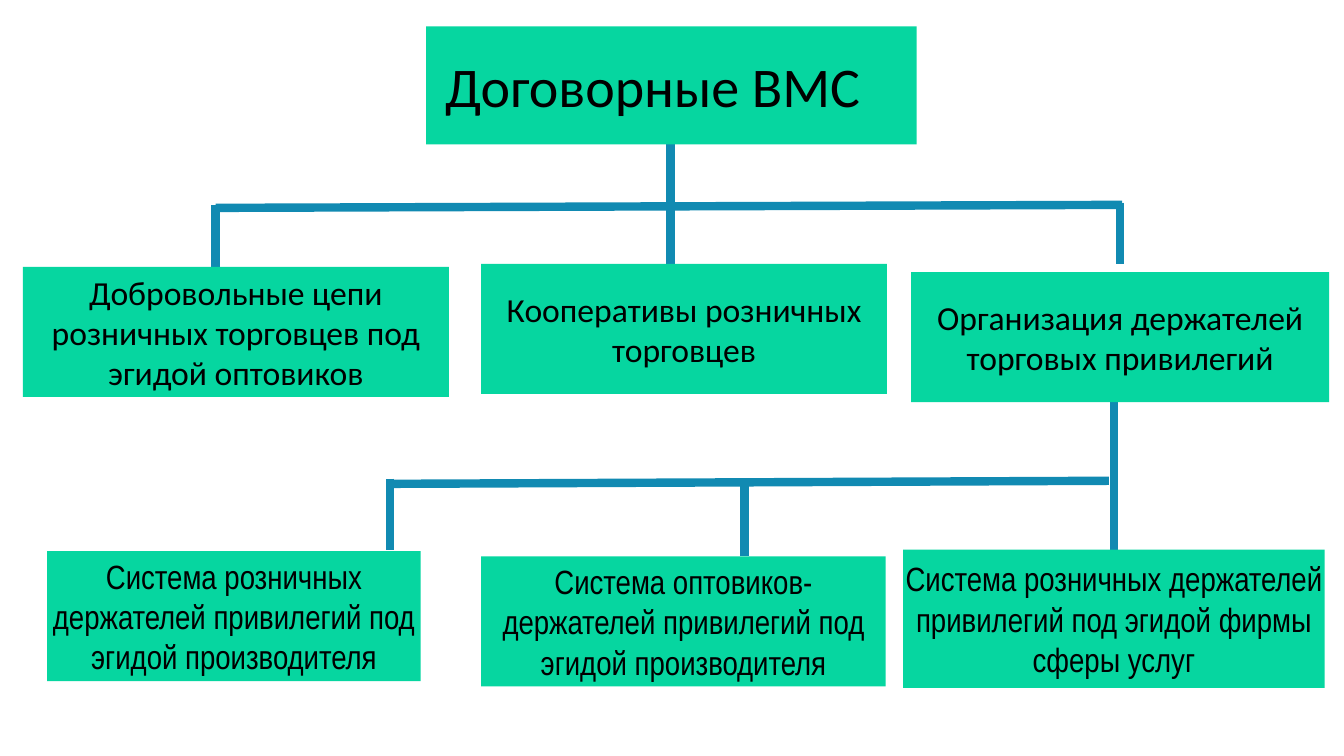
from lxml import etree
from pptx import Presentation
from pptx.dml.color import RGBColor
from pptx.enum.shapes import MSO_CONNECTOR, MSO_SHAPE
from pptx.enum.text import MSO_ANCHOR, PP_ALIGN
from pptx.oxml.ns import qn
from pptx.util import Inches, Pt

RECT, STRAIGHT = MSO_SHAPE.RECTANGLE, MSO_CONNECTOR.STRAIGHT
LEFT, CENTER, MIDDLE = PP_ALIGN.LEFT, PP_ALIGN.CENTER, MSO_ANCHOR.MIDDLE
COLORS = {"box": "06D6A0", "line": "118AB2", "text": "000000"}

prs = Presentation()
prs.slide_width, prs.slide_height = Inches(13.33), Inches(7.5)
s = prs.slides.add_slide(prs.slide_layouts[6])


def place(x, y):
    """Turn percentages of the slide's width and height into lengths."""
    return int(prs.slide_width * x / 100), int(prs.slide_height * y / 100)


def add_box(text, x, y, w, h=17.2, font="Calibri", size=24, align=CENTER, inset=0.1):
    sp = s.shapes.add_shape(RECT, *place(x, y), *place(w, h))
    sp.shadow.inherit = False
    sp.fill.solid()
    sp.fill.fore_color.rgb = RGBColor.from_string(COLORS["box"])
    sp.line.fill.background()
    tf = sp.text_frame
    tf.word_wrap = True
    tf.vertical_anchor = MIDDLE
    tf.margin_left = tf.margin_right = Inches(inset)
    tf.margin_top = tf.margin_bottom = 0
    p = tf.paragraphs[0]
    p.alignment = align
    r = p.add_run()
    r.text = text
    r.font.name, r.font.size = font, Pt(size)
    r.font.color.rgb = RGBColor.from_string(COLORS["text"])


# Connectors as x1, y1, x2, y2 in percent of the slide
title_links = [
    (49.9, 16.3, 49.9, 36),
    (83.5, 27.1, 16.05, 27.5),
    (16.05, 27.1, 16.05, 35.6),
    (83.35, 26.8, 83.35, 34.9),
]
franchise_links = [
    (82.9, 51.5, 82.9, 72.7),
    (82.5, 63.6, 29, 64),
    (29, 63.3, 29, 72.8),
    (55.4, 64, 55.4, 73.5),
]
for x1, y1, x2, y2 in title_links + franchise_links:
    link = s.shapes.add_connector(STRAIGHT, *place(x1, y1), *place(x2, y2))
    link.line.width = Pt(6)
    link.line.color.rgb = RGBColor.from_string(COLORS["line"])
    etree.SubElement(link._element.spPr, qn("a:effectLst"))

# Boxes, level by level
add_box("Договорные ВМС", 31.7, 3.5, 36.5, 15.6, size=40, align=LEFT, inset=0.19)

add_box("Добровольные цепи розничных торговцев под эгидой оптовиков", 1.7, 35.3, 31.7)
add_box("Кооперативы розничных торговцев", 35.8, 34.9, 30.2)
add_box("Организация держателей торговых привилегий", 67.8, 36, 31.1)

narrow = "Arial Narrow"
add_box("Система розничных держателей привилегий под эгидой производителя",
        3.5, 72.9, 27.8, font=narrow, inset=0)
add_box("Система оптовиков-держателей привилегий под эгидой производителя",
        35.8, 73.6, 30.1, font=narrow)
add_box("Система розничных держателей привилегий под эгидой фирмы сферы услуг",
        67.2, 72.7, 31.35, 18.3, font=narrow, inset=0)

prs.save("out.pptx")
